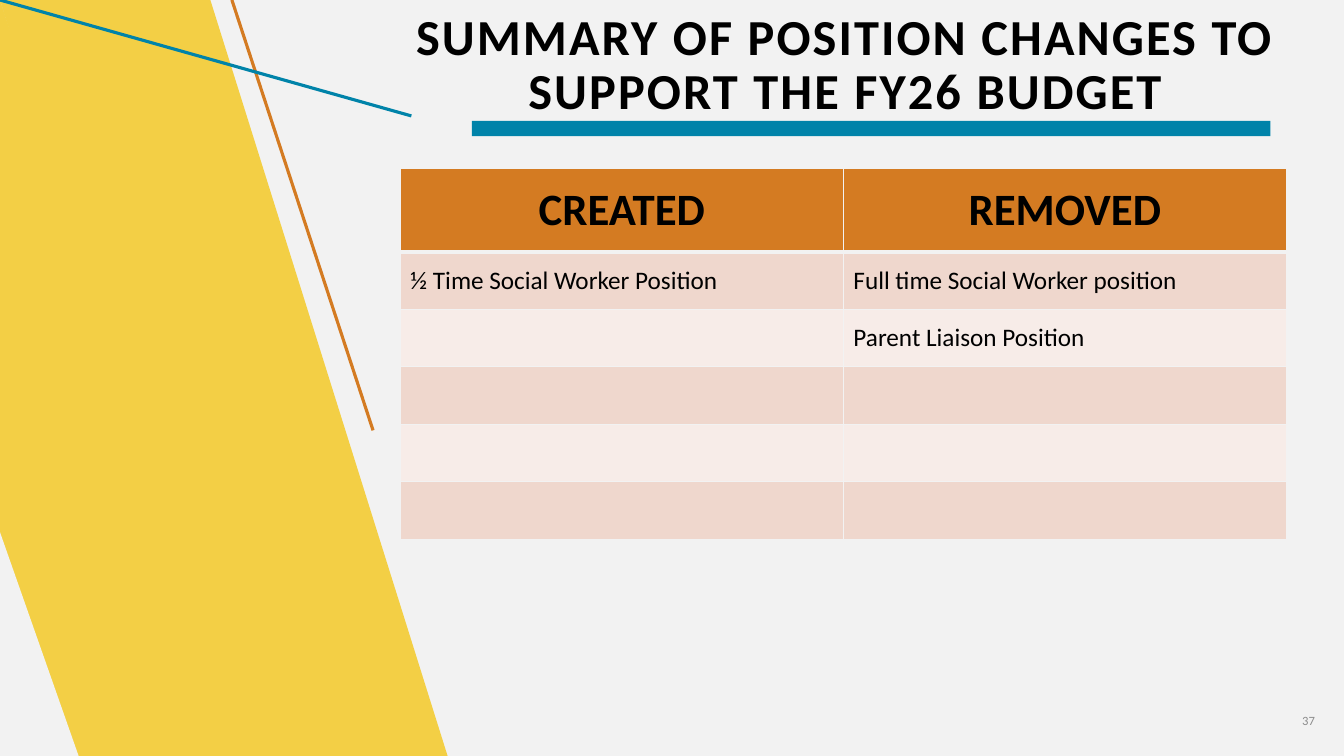
from lxml import etree
from pptx import Presentation
from pptx.dml.color import RGBColor
from pptx.enum.shapes import MSO_CONNECTOR, MSO_SHAPE
from pptx.enum.text import MSO_ANCHOR, MSO_AUTO_SIZE, PP_ALIGN
from pptx.oxml.ns import qn
from pptx.util import Emu, Pt

RECT = MSO_SHAPE.RECTANGLE
PARALLELOGRAM = MSO_SHAPE.PARALLELOGRAM
TRIANGLE = MSO_SHAPE.RIGHT_TRIANGLE
STRAIGHT = MSO_CONNECTOR.STRAIGHT
MIDDLE = MSO_ANCHOR.MIDDLE
NO_FIT = MSO_AUTO_SIZE.NONE
LEFT, CENTER, RIGHT = PP_ALIGN.LEFT, PP_ALIGN.CENTER, PP_ALIGN.RIGHT

EMU_PER_PX = 9144
FONT = "Calibri"
BLACK, GRAY, PALE = "000000", "8C8C8C", "F2F2F2"
ORANGE, YELLOW, BLUE = "D47B22", "F3CF45", "0083A9"
BANDS = ["EFD7CD", "F7ECE8"]

POSITIONS = [
    ("CREATED", "REMOVED"),
    ("½ Time Social Worker Position", "Full time Social Worker position"),
    ("", "Parent Liaison Position"),
    ("", ""),
    ("", ""),
    ("", ""),
]
HEADER_HEIGHT, ROW_HEIGHT = 83, 57


def px(n):
    return Emu(n * EMU_PER_PX)


def box(*lengths):
    return [px(n) for n in lengths]


def rgb(value):
    return RGBColor.from_string(value)


def fill_solid(fill, color):
    fill.solid()
    fill.fore_color.rgb = rgb(color)


def write(tf, text, size, color=BLACK, bold=False, align=LEFT):
    p = tf.paragraphs[0]
    p.text = text
    p.alignment = align
    p.font.name = FONT
    p.font.size = Pt(size)
    p.font.bold = bold
    p.font.color.rgb = rgb(color)
    return p


def add_block(slide, kind, bounds, color):
    sp = slide.shapes.add_shape(kind, *box(*bounds))
    sp.shadow.inherit = False
    fill_solid(sp.fill, color)
    sp.line.fill.background()
    return sp


def add_line(slide, start, end, color):
    line = slide.shapes.add_connector(STRAIGHT, *box(*start, *end))
    line.line.color.rgb = rgb(color)
    line.line.width = Pt(2.25)
    etree.SubElement(line._element.spPr, qn("a:effectLst"))


def add_backdrop(slide):
    fill_solid(slide.background.fill, PALE)
    add_line(slide, (370, 427), (230, 0), ORANGE)
    band = add_block(slide, PARALLELOGRAM, (0, 0, 444, 750), YELLOW)
    band.adjustments[0] = 0.53
    band._element.spPr.xfrm.set("flipH", "1")
    add_block(slide, TRIANGLE, (0, 0, 245, 750), YELLOW)
    add_block(slide, TRIANGLE, (0, 528, 78, 222), PALE)
    add_line(slide, (408, 115), (0, 0), BLUE)


def format_title(slide, text):
    title = slide.shapes.title
    title.left, title.top, title.width, title.height = box(359, 9, 959, 113)
    tf = title.text_frame
    tf.word_wrap = True
    tf.auto_size = NO_FIT
    tf.vertical_anchor = MIDDLE
    p = write(tf, text, 36, bold=True, align=CENTER)
    p.line_spacing = 0.9
    p.runs[0].font._element.set("spc", "150")


def add_page_number(slide, number):
    tf = slide.shapes.add_textbox(*box(1206, 695, 108, 40)).text_frame
    tf.word_wrap = True
    tf.vertical_anchor = MIDDLE
    write(tf, number, 9, GRAY, align=RIGHT)


def set_borders(cell, top, bottom):
    tcPr = cell._tc.get_or_add_tcPr()
    sides = [("L", 1), ("R", 1), ("T", top), ("B", bottom)]
    for i, (side, width) in enumerate(sides):
        ln = etree.Element(qn(f"a:ln{side}"), w=str(Pt(width)))
        fill = etree.SubElement(ln, qn("a:solidFill"))
        etree.SubElement(fill, qn("a:srgbClr"), val=PALE)
        tcPr.insert(i, ln)


def add_positions_table(slide, rows):
    height = HEADER_HEIGHT + ROW_HEIGHT * (len(rows) - 1)
    frame = slide.shapes.add_table(len(rows), 2, *box(397, 167, 879, height))
    table = frame.table
    table.first_row = table.horz_banding = False
    for r, texts in enumerate(rows):
        header = r == 0
        table.rows[r].height = px(HEADER_HEIGHT if header else ROW_HEIGHT)
        for c, text in enumerate(texts):
            cell = table.cell(r, c)
            cell.vertical_anchor = MIDDLE
            fill_solid(cell.fill, ORANGE if header else BANDS[(r - 1) % 2])
            set_borders(cell, 3 if r == 1 else 1, 3 if header else 1)
            if text:
                write(cell.text_frame, text, 32 if header else 18,
                      bold=header, align=CENTER if header else LEFT)


def main():
    prs = Presentation()
    prs.slide_width, prs.slide_height = box(1333, 750)
    slide = prs.slides.add_slide(prs.slide_layouts[5])
    add_backdrop(slide)
    format_title(slide, "SUMMARY OF POSITION CHANGES TO SUPPORT THE FY26 BUDGET")
    add_page_number(slide, "37")
    add_block(slide, RECT, (468, 120, 792, 15), BLUE)
    add_positions_table(slide, POSITIONS)
    prs.save("out.pptx")


if __name__ == "__main__":
    main()
